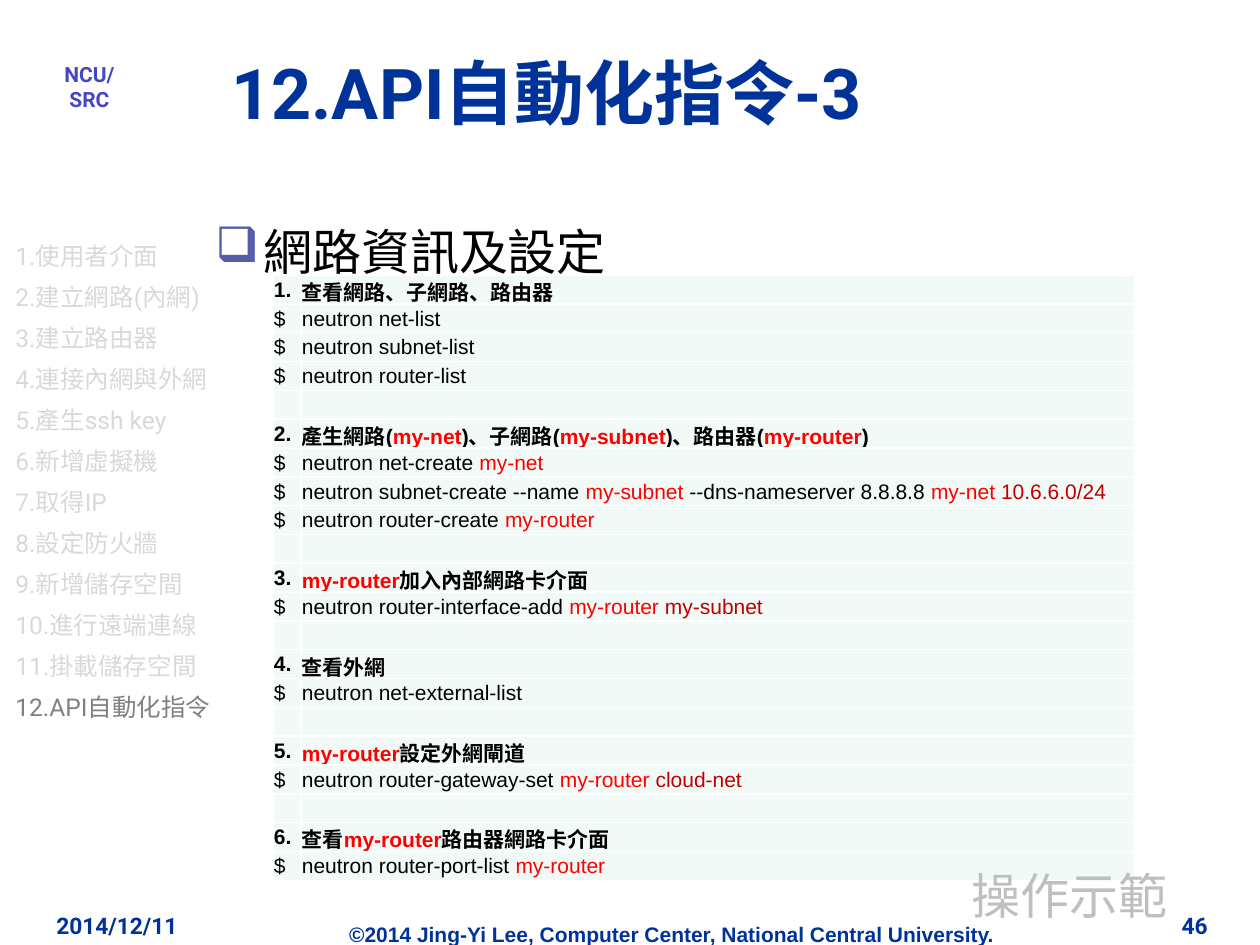
from lxml.etree import SubElement as Sub
from pptx import Presentation
from pptx.dml.color import RGBColor as RGB
from pptx.enum.text import MSO_ANCHOR as Anchor, PP_ALIGN as Align
from pptx.oxml.ns import qn
from pptx.util import Pt

INK, RED, DARK = RGB(0, 0, 0), RGB(255, 0, 0), RGB(192, 0, 0)
NAVY, VIOLET = RGB(0, 51, 153), RGB(70, 70, 194)
PALE, GREY, SILVER = RGB(217, 217, 217), RGB(128, 128, 128), RGB(191, 191, 191)
MINT = RGB(241, 250, 246)

STEPS = ["使用者介面", "建立網路(內網)", "建立路由器", "連接內網與外網", "產生ssh key", "新增虛擬機",
         "取得IP", "設定防火牆", "新增儲存空間", "進行遠端連線", "掛載儲存空間", "API自動化指令"]
NET, SUB, ROUTER = ("my-net", RED), ("my-subnet", RED), ("my-router", RED)
TASKS = [
    (["查看網路、子網路、路由器"],
     [["net-list"], ["subnet-list"], ["router-list"]]),
    (["產生網路(", NET, ")、子網路(", SUB, ")、路由器(", ROUTER, ")"],
     [["net-create ", NET],
      ["subnet-create --name ", SUB, " --dns-nameserver 8.8.8.8 ", ("my-net ", RED), ("10.6.6.0/24", DARK)],
      ["router-create ", ROUTER]]),
    ([ROUTER, "加入內部網路卡介面"],
     [["router-interface-add ", ("my-router ", RED), ("my-subnet", DARK)]]),
    (["查看外網"], [["net-external-list"]]),
    ([ROUTER, "設定外網閘道"],
     [["router-gateway-set ", ("my-router ", RED), ("cloud-net", DARK)]]),
    (["查看", ROUTER, "路由器網路卡介面"], [["router-port-list ", ROUTER]]),
]
BOXES = [
    ("©2014 Jing-Yi Lee, Computer Center, National Central University.", (217, 915, 910, 38),
     dict(name="Arial", size=12, bold=True, color=NAVY), dict(alignment=Align.CENTER)),
    ("NCU/SRC", (34, 55, 111, 38),
     dict(name="Roboto", size=12, bold=True, color=VIOLET), dict(alignment=Align.CENTER)),
    ("12.API自動化指令-3", (219, 35, 1041, 113),
     dict(name="Roboto", size=40, bold=True, color=NAVY), {}),
    ("操作示範", (959, 859, 240, 76), dict(name="Roboto", size=28, color=SILVER), {}),
    ("2014/12/11", (44, 906, 262, 63), dict(name="Roboto", size=13, bold=True, color=NAVY), {}),
    ("46", (958, 906, 262, 63),
     dict(name="Roboto", size=13, bold=True, color=NAVY), dict(alignment=Align.RIGHT)),
]


def px(n):
    return round(n * 914400 / 126)


def put(obj, vals):
    for key, val in vals.items():
        setattr(obj, key, val)


def write(para, text, look):
    run = para.add_run()
    run.text = text
    for key, val in look.items():
        if key == "color":
            run.font.color.rgb = val
        else:
            setattr(run.font, key, Pt(val) if key == "size" else val)


def box(slide, place):
    frame = slide.shapes.add_textbox(*map(px, place)).text_frame
    frame.word_wrap = True
    return frame


def fill(cell, parts, bold):
    put(cell, dict(margin_left=px(1), margin_right=px(1), margin_top=px(1),
                   margin_bottom=0, vertical_anchor=Anchor.MIDDLE))
    para = cell.text_frame.paragraphs[0]
    for part in parts:
        text, tint = part if isinstance(part, tuple) else (part, INK)
        write(para, text, dict(name="Arial", size=12, bold=bold, color=tint))
    if not parts:
        Sub(para._p, qn("a:endParaRPr"), sz="1200")
    props = cell._tc.get_or_add_tcPr()
    for side in "LRTB":
        line = Sub(props, qn("a:ln" + side), w=str(Pt(1)))
        Sub(Sub(line, qn("a:solidFill")), qn("a:srgbClr"), val="FFFFFF")
    cell.fill.solid()
    cell.fill.fore_color.rgb = MINT


def menu(slide):
    frame = box(slide, (3, 229, 1071, 660))
    for n, step in enumerate(STEPS, 1):
        para = frame.paragraphs[0] if n == 1 else frame.add_paragraph()
        put(para, dict(line_spacing=1.2, space_before=Pt(3.3 if n > 1 else 0)))
        tint = GREY if n == len(STEPS) else PALE
        write(para, f"{n}.{step}", dict(name="Roboto", size=14, color=tint))


def topic(slide):
    para = box(slide, (203, 204, 1032, 90)).paragraphs[0]
    props = para._p.get_or_add_pPr()
    put(para, dict(line_spacing=1.2))
    props.set("marL", str(px(48)))
    props.set("indent", str(-px(48)))
    Sub(Sub(props, qn("a:buClr")), qn("a:srgbClr"), val="555DAB")
    Sub(props, qn("a:buChar"), char="❑")
    write(para, "網路資訊及設定", dict(name="Roboto", size=28, color=INK))


def grid(slide):
    rows = []
    for n, (head, cmds) in enumerate(TASKS, 1):
        if rows:
            rows.append(([], [], False))
        rows.append(([f"{n}."], head, True))
        rows += [(["$"], ["neutron " + cmd[0], *cmd[1:]], False) for cmd in cmds]
    table = slide.shapes.add_table(len(rows), 2, *map(px, (273, 275, 862, 606))).table
    put(table, dict(first_row=False, horz_banding=False))
    for col, wide in zip(table.columns, (28, 834)):
        col.width = px(wide)
    for r, (mark, parts, bold) in enumerate(rows):
        fill(table.cell(r, 0), mark, bold)
        fill(table.cell(r, 1), parts, bold)


def main():
    """Build the slide of network commands."""
    deck = Presentation()
    put(deck, dict(slide_width=px(1260), slide_height=px(945)))
    slide = deck.slides.add_slide(deck.slide_layouts[6])
    menu(slide)
    grid(slide)
    topic(slide)
    for text, place, look, form in BOXES:
        frame = box(slide, place)
        frame.vertical_anchor = Anchor.MIDDLE if look["size"] == 40 else Anchor.TOP
        put(frame.paragraphs[0], form)
        write(frame.paragraphs[0], text, look)
    deck.save("out.pptx")


if __name__ == "__main__":
    main()
